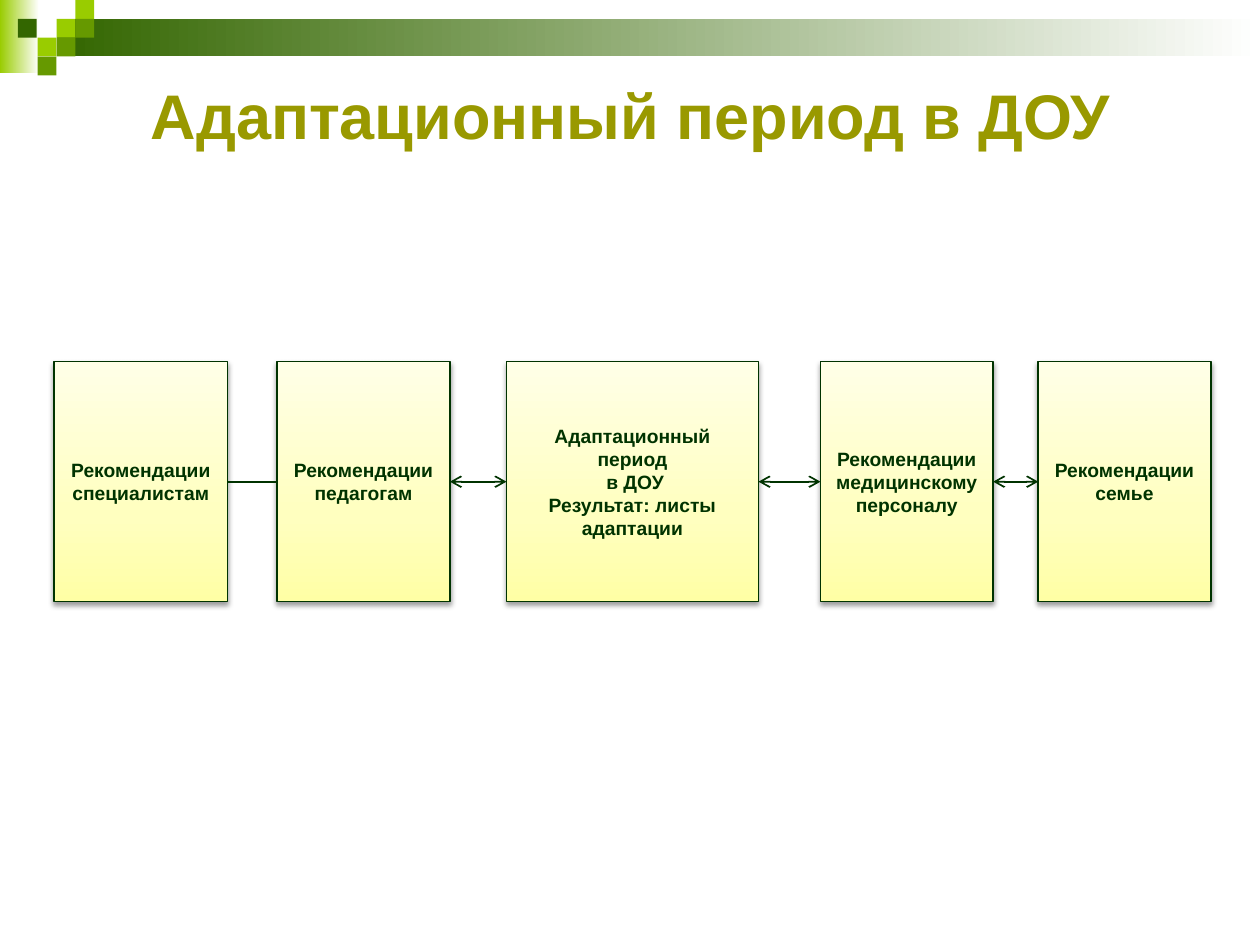
from dataclasses import dataclass

import lxml.etree
import pptx
import pptx.dml.color
import pptx.enum.shapes
import pptx.enum.text
import pptx.oxml
import pptx.oxml.ns
import pptx.util

Cm = pptx.util.Cm
Pt = pptx.util.Pt
qn = pptx.oxml.ns.qn
NS = pptx.oxml.ns.nsdecls("a")

LIME, GREEN, FOREST = "99CC00", "669900", "336600"
INK, OLIVE = "003300", "999900"
CREAM = [(0, "FFFFA5"), (35, "FFFFBF"), (100, "FFFFE7")]
CELL = 0.38
BOX_TOP, BOX_HEIGHT = 7.29, 4.84


@dataclass
class Cell:
    col: int
    row: int
    color: str


@dataclass
class Box:
    left: float
    width: float
    lines: list[str]
    arrows_to_next: bool = True


CELLS = [
    Cell(3, 0, LIME), Cell(2, 1, LIME), Cell(3, 1, GREEN), Cell(1, 2, LIME),
    Cell(0, 1, FOREST), Cell(2, 2, GREEN), Cell(1, 3, GREEN),
]
CELL_LEFTS = [0.36, 0.76, 1.14, 1.52]

BOXES = [
    Box(1.09, 3.5, ["Рекомендации специалистам"], False),
    Box(5.59, 3.48, ["Рекомендации педагогам"]),
    Box(10.21, 5.08, ["Адаптационный период", " в ДОУ", "Результат: листы адаптации"]),
    Box(16.54, 3.48, ["Рекомендации медицинскому персоналу"]),
    Box(20.93, 3.48, ["Рекомендации семье"]),
]


def rgb(color: str):
    return pptx.dml.color.RGBColor.from_string(color)


def add_rect(s, left: float, top: float, width: float, height: float):
    sp = s.shapes.add_shape(pptx.enum.shapes.MSO_SHAPE.RECTANGLE,
                            Cm(left), Cm(top), Cm(width), Cm(height))
    sp.shadow.inherit = False
    sp.line.fill.background()
    return sp


def set_gradient(sp, stops: list, angle: int) -> None:
    sp.fill.background()
    gs = "".join(f'<a:gs pos="{pos * 1000}"><a:srgbClr val="{color}"/></a:gs>'
                 for pos, color in stops)
    grad = pptx.oxml.parse_xml(
        f'<a:gradFill {NS} rotWithShape="1"><a:gsLst>{gs}</a:gsLst>'
        f'<a:lin ang="{angle * 60000}" scaled="0"/></a:gradFill>')
    spPr = sp.element.spPr
    spPr.replace(spPr.find(qn("a:noFill")), grad)


def set_shadow(sp) -> None:
    sp.element.spPr.find(qn("a:effectLst")).append(pptx.oxml.parse_xml(
        f'<a:outerShdw {NS} blurRad="{Pt(3.1)}" dist="{Pt(1.6)}" dir="5400000" '
        'rotWithShape="0"><a:srgbClr val="000000"><a:alpha val="38000"/>'
        '</a:srgbClr></a:outerShdw>'))


def write(tf, lines: list[str], size: int, color: str) -> None:
    tf.word_wrap = True
    tf.vertical_anchor = pptx.enum.text.MSO_ANCHOR.MIDDLE
    for i, line in enumerate(lines):
        p = tf.add_paragraph() if i else tf.paragraphs[0]
        p.alignment = pptx.enum.text.PP_ALIGN.CENTER
        r = p.add_run()
        r.text = line
        r.font.name = "Arial"
        r.font.size = Pt(size)
        r.font.bold = True
        r.font.color.rgb = rgb(color)


def add_box(s, box: Box):
    sp = add_rect(s, box.left, BOX_TOP, box.width, BOX_HEIGHT)
    set_gradient(sp, CREAM, 270)
    set_shadow(sp)
    sp.line.color.rgb = rgb(INK)
    sp.line.width = Pt(1)
    write(sp.text_frame, box.lines, 11, INK)
    return sp


def join(s, left_box, right_box, arrows: bool) -> None:
    cx = s.shapes.add_connector(pptx.enum.shapes.MSO_CONNECTOR.STRAIGHT, 0, 0, 0, 0)
    cx.begin_connect(left_box, 3)
    cx.end_connect(right_box, 1)
    cx.line.color.rgb = rgb(INK)
    cx.line.width = Pt(1)
    spPr = cx.element.spPr
    if arrows:
        ln = spPr.find(qn("a:ln"))
        for end in ("headEnd", "tailEnd"):
            lxml.etree.SubElement(ln, qn(f"a:{end}"), type="arrow")
    lxml.etree.SubElement(spPr, qn("a:effectLst"))


def add_header(s) -> None:
    set_gradient(add_rect(s, 0, 0, 0.79, 1.47), [(0, LIME), (100, "FFFFFF")], 0)
    set_gradient(add_rect(s, 1.14, CELL, 24.26, 0.75), [(0, FOREST), (100, "FFFFFF")], 0)
    for cell in CELLS:
        sp = add_rect(s, CELL_LEFTS[cell.col], cell.row * CELL, CELL, CELL)
        sp.fill.solid()
        sp.fill.fore_color.rgb = rgb(cell.color)


def add_title(s) -> None:
    title = s.shapes.title
    title.left, title.top, title.width, title.height = Cm(0.71), Cm(1.27), Cm(24), Cm(2.06)
    write(title.text_frame, ["Адаптационный период в ДОУ"], 36, OLIVE)


def main() -> None:
    prs = pptx.Presentation()
    prs.slide_width, prs.slide_height = Cm(25.4), Cm(19.05)
    s = prs.slides.add_slide(prs.slide_layouts[5])
    add_header(s)
    shapes = [add_box(s, box) for box in BOXES]
    for box, sp, following in zip(BOXES, shapes, shapes[1:]):
        join(s, sp, following, box.arrows_to_next)
    add_title(s)
    prs.save("out.pptx")


if __name__ == "__main__":
    main()
